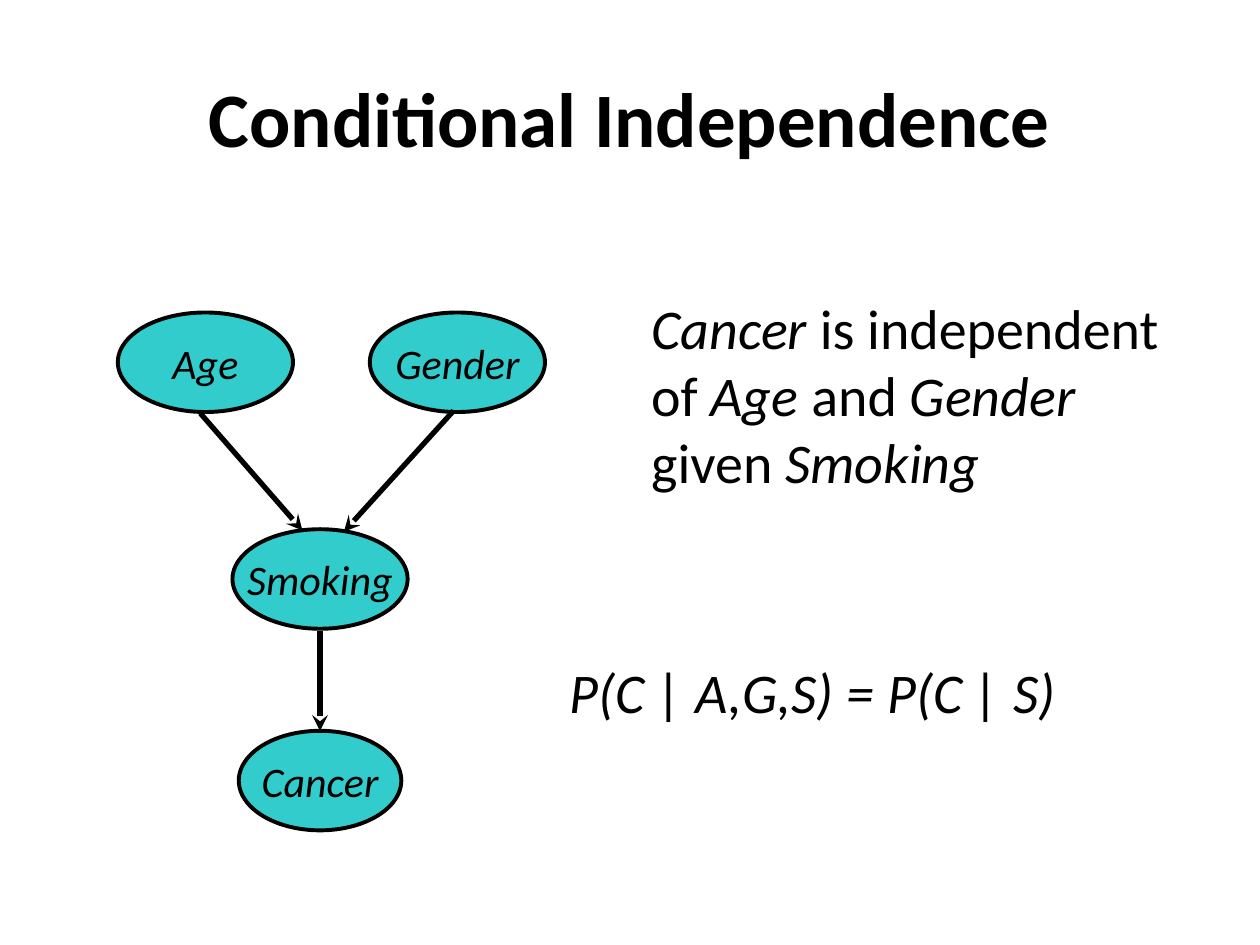
from lxml import etree
from pptx import Presentation
from pptx import util as u
from pptx.dml.color import RGBColor
from pptx.enum import shapes, text
from pptx.oxml.ns import qn

BLACK = RGBColor(0x00, 0x00, 0x00)
TEAL = RGBColor(0x33, 0xCC, 0xCC)
FONT = "Calibri"

prs = Presentation()
prs.slide_width, prs.slide_height = u.Inches(10), u.Inches(7.5)
s = prs.slides.add_slide(prs.slide_layouts[5])


def style(p, size, italic=None, bold=None):
    p.font.name, p.font.size = FONT, u.Pt(size)
    p.font.italic, p.font.bold = italic, bold
    p.font.color.rgb = BLACK


def add_text(left, top, width, height, runs, wrap):
    sp = s.shapes.add_textbox(*map(u.Inches, (left, top, width, height)))
    tf = sp.text_frame
    tf.word_wrap = wrap
    tf.auto_size = text.MSO_AUTO_SIZE.SHAPE_TO_FIT_TEXT
    p = tf.paragraphs[0]
    style(p, 32)
    for words, italic in runs:
        r = p.add_run()
        r.text, r.font.italic = words, italic


# Title
sp = s.shapes.title
sp.left, sp.top, sp.width, sp.height = map(u.Inches, (0.5, 0.3, 9, 1.25))
tf = sp.text_frame
tf.text = "Conditional Independence"
tf.vertical_anchor = text.MSO_ANCHOR.MIDDLE
p = tf.paragraphs[0]
p.alignment = text.PP_ALIGN.CENTER
style(p, 44, bold=True)

# Network nodes: name, centre x, top, width
NODE_HEIGHT = 0.79
nodes = [
    ("Smoking", 2.54, 4.2, 1.39),
    ("Gender", 3.63, 2.48, 1.39),
    ("Age", 1.63, 2.48, 1.39),
    ("Cancer", 2.54, 5.8, 1.29),
]
for name, centre, top, width in nodes:
    sp = s.shapes.add_shape(
        shapes.MSO_SHAPE.OVAL, u.Inches(centre - width / 2), u.Inches(top),
        u.Inches(width), u.Inches(NODE_HEIGHT))
    sp.shadow.inherit = False
    sp.fill.solid()
    sp.fill.fore_color.rgb = TEAL
    sp.line.color.rgb, sp.line.width = BLACK, u.Pt(2.25)
    tf = sp.text_frame
    tf.text, tf.word_wrap = name, False
    tf.vertical_anchor = text.MSO_ANCHOR.MIDDLE
    p = tf.paragraphs[0]
    p.alignment = text.PP_ALIGN.CENTER
    style(p, 24, italic=True)

# Arrows from cause to effect
arrows = [
    (3.6, 3.26, 2.73, 4.22),   # Gender to Smoking
    (1.59, 3.28, 2.4, 4.21),   # Age to Smoking
    (2.54, 5.01, 2.54, 5.8),   # Smoking to Cancer
]
for ends in arrows:
    sp = s.shapes.add_connector(shapes.MSO_CONNECTOR.STRAIGHT, *map(u.Inches, ends))
    sp.line.color.rgb, sp.line.width = BLACK, u.Pt(3)
    etree.SubElement(sp.line._get_or_add_ln(), qn("a:tailEnd"), type="stealth")
    etree.SubElement(sp._element.spPr, qn("a:effectLst"))

# Statement and formula
add_text(5.07, 2.28, 4.39, 1.72, [
    ("Cancer", True), (" is independent of ", False), ("Age", True),
    (" and ", False), ("Gender", True), (" given ", False), ("Smoking", True),
], wrap=True)
add_text(4.42, 5.17, 4.12, 0.64, [("P(C | A,G,S) = P(C | S)", True)], wrap=False)

prs.save("out.pptx")
